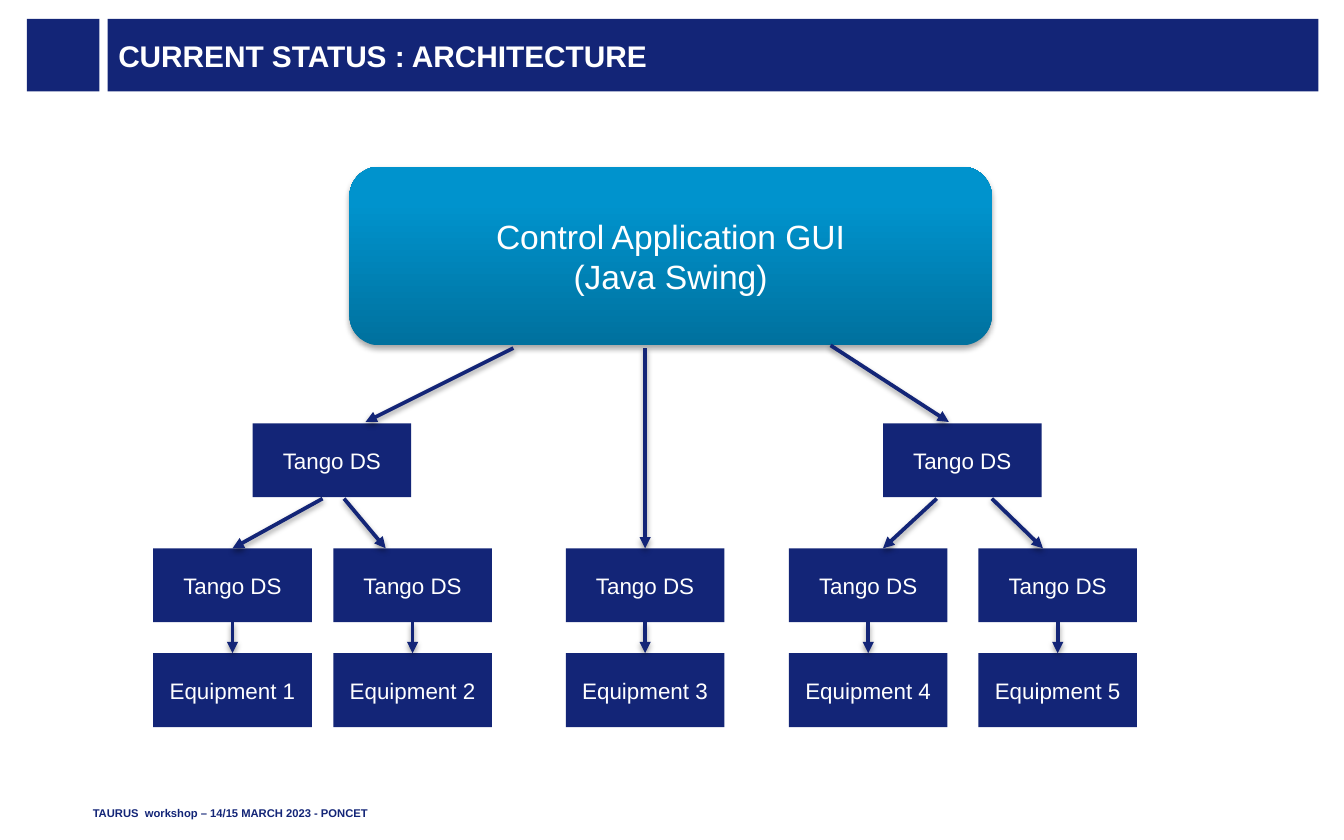
from dataclasses import dataclass
from typing import Any, Optional

from lxml import etree
from pptx import Presentation
from pptx import util as u
from pptx.dml.color import RGBColor
from pptx.enum import shapes, text
from pptx.oxml import parse_xml
from pptx.oxml.ns import nsdecls, qn

EMU_PER_PX = 9144  # 100 px to the inch
NAVY = RGBColor(0x13, 0x25, 0x77)
WHITE = RGBColor(0xFF, 0xFF, 0xFF)
BLUE_STOPS = ((0, "00719E"), (80, "0093CD"), (100, "0094CE"))
FONT = "Arial"

BOX_W, BOX_H = 118, 55
GROUP_Y, DEVICE_Y, EQUIPMENT_Y = 315, 408, 486
COLUMN_LEFTS = (114, 248, 421, 587, 728)
GROUP_LEFTS = (188, 657)
BOX_TOP, BOX_BOTTOM = 0, 2


@dataclass(frozen=True)
class Area:
    left: int
    top: int
    width: int
    height: int

    def emu(self) -> tuple[u.Emu, ...]:
        return tuple(px(n) for n in (self.left, self.top, self.width, self.height))


@dataclass(frozen=True)
class Arrow:
    """Ends in px, with the column whose server box it meets in mid-side, if any."""
    x1: int
    y1: int
    x2: int
    y2: int
    column: Optional[int] = None


ARROWS = (
    Arrow(240, 371, 173, 408, column=0),
    Arrow(256, 371, 287, 408),
    Arrow(697, 371, 657, 408),
    Arrow(738, 371, 776, 408),
    Arrow(382, 259, 272, 314),
    Arrow(480, 259, 480, 408, column=2),
    Arrow(618, 257, 706, 314),
)


def px(length: int) -> u.Emu:
    return u.Emu(length * EMU_PER_PX)


def write(shape: Any, *lines: str, size: int, color: RGBColor = WHITE, bold: bool = False,
          align: Any = text.PP_ALIGN.CENTER, anchor: Any = text.MSO_ANCHOR.MIDDLE,
          margins: Optional[tuple[int, int]] = None) -> None:
    """Fill a shape with one paragraph per line; margins are (sides, top and bottom)."""
    frame = shape.text_frame
    frame.word_wrap = True
    frame.auto_size = text.MSO_AUTO_SIZE.NONE
    frame.vertical_anchor = anchor
    if margins:
        frame.margin_left = frame.margin_right = px(margins[0])
        frame.margin_top = frame.margin_bottom = px(margins[1])
    for index, line in enumerate(lines):
        para = frame.add_paragraph() if index else frame.paragraphs[0]
        para.alignment = align
        span = para.add_run()
        span.text = line
        span.font.name, span.font.size = FONT, u.Pt(size)
        span.font.bold, span.font.color.rgb = bold, color


def cast_shadow(shape: Any, opacity: int, distance: float) -> None:
    shape._element.spPr.append(parse_xml(
        f'<a:effectLst {nsdecls("a")}><a:outerShdw blurRad="{u.Pt(3.1)}" '
        f'dist="{u.Pt(distance)}" dir="5400000" rotWithShape="0"><a:srgbClr val="000000">'
        f'<a:alpha val="{opacity * 1000}"/></a:srgbClr></a:outerShdw></a:effectLst>'))


def add_block(page: Any, area: Area, label: str = "") -> Any:
    block = page.shapes.add_shape(shapes.MSO_SHAPE.RECTANGLE, *area.emu())
    block.shadow.inherit = False
    block.fill.solid()
    block.fill.fore_color.rgb = NAVY
    block.line.fill.background()
    if label:
        write(block, label, size=12)
    return block


def add_application(page: Any) -> None:
    panel = page.shapes.add_shape(shapes.MSO_SHAPE.ROUNDED_RECTANGLE,
                                  *Area(260, 124, 478, 133).emu())
    panel.line.fill.background()
    stops = "".join(f'<a:gs pos="{at * 1000}"><a:srgbClr val="{color}"/></a:gs>'
                    for at, color in BLUE_STOPS)
    panel._element.spPr.find(qn("a:prstGeom")).addnext(parse_xml(
        f'<a:gradFill {nsdecls("a")} rotWithShape="1"><a:gsLst>{stops}</a:gsLst>'
        '<a:lin ang="16200000" scaled="0"/></a:gradFill>'))
    cast_shadow(panel, opacity=35, distance=1.8)
    write(panel, "Control Application GUI", "(Java Swing)", size=18)


def add_arrow(page: Any, arrow: Arrow, source: Any = None, target: Any = None) -> None:
    connector = page.shapes.add_connector(
        shapes.MSO_CONNECTOR.STRAIGHT,
        *(px(n) for n in (arrow.x1, arrow.y1, arrow.x2, arrow.y2)))
    if source is not None:
        connector.begin_connect(source, BOX_BOTTOM)
    if target is not None:
        connector.end_connect(target, BOX_TOP)
    connector.line.color.rgb = NAVY
    connector.line.width = u.Pt(2)
    outline = connector._element.spPr.find(qn("a:ln"))
    etree.SubElement(outline, qn("a:tailEnd"), type="triangle")
    cast_shadow(connector, opacity=38, distance=1.6)


def add_heading(page: Any) -> None:
    add_block(page, Area(20, 14, 54, 54))
    title = page.shapes.title
    title.left, title.top, title.width, title.height = Area(80, 14, 901, 54).emu()
    title.fill.solid()
    title.fill.fore_color.rgb = NAVY
    write(title, "CURRENT STATUS : ARCHITECTURE", size=16, bold=True,
          align=text.PP_ALIGN.LEFT, margins=(8, 0))


def add_footer(page: Any) -> None:
    footer = page.shapes.add_textbox(*Area(69, 591, 669, 19).emu())
    write(footer, "TAURUS  workshop – 14/15 MARCH 2023 - PONCET", size=6, color=NAVY,
          bold=True, align=text.PP_ALIGN.LEFT, anchor=text.MSO_ANCHOR.BOTTOM, margins=(0, 0))


def main() -> None:
    deck = Presentation()
    deck.slide_width, deck.slide_height = px(1000), px(625)
    page = deck.slides.add_slide(deck.slide_layouts[5])
    add_heading(page)
    add_footer(page)
    add_application(page)

    for left in GROUP_LEFTS:
        add_block(page, Area(left, GROUP_Y, BOX_W, BOX_H), "Tango DS")
    servers = []
    for number, left in enumerate(COLUMN_LEFTS, start=1):
        server = add_block(page, Area(left, DEVICE_Y, BOX_W, BOX_H), "Tango DS")
        equipment = add_block(page, Area(left, EQUIPMENT_Y, BOX_W, BOX_H),
                              f"Equipment {number}")
        middle = left + BOX_W // 2
        add_arrow(page, Arrow(middle, DEVICE_Y + BOX_H, middle, EQUIPMENT_Y),
                  source=server, target=equipment)
        servers.append(server)

    for arrow in ARROWS:
        target = None if arrow.column is None else servers[arrow.column]
        add_arrow(page, arrow, target=target)
    deck.save("out.pptx")


if __name__ == "__main__":
    main()
